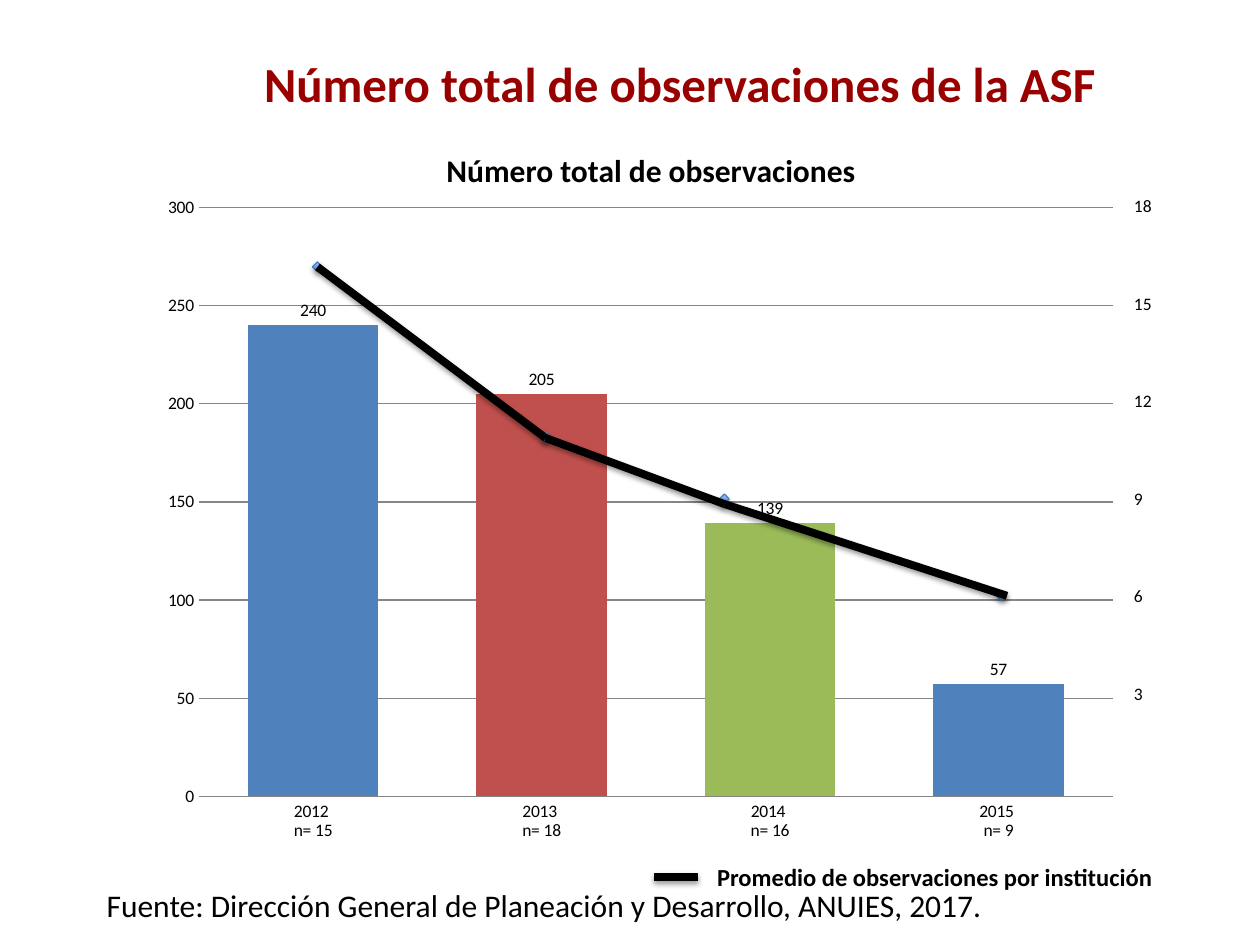
from collections import namedtuple
from itertools import pairwise

from lxml.etree import SubElement
from pptx import Presentation
from pptx.chart.data import CategoryChartData
from pptx.dml.color import RGBColor
from pptx.enum.chart import XL_CHART_TYPE as ChartType
from pptx.enum.chart import XL_LABEL_POSITION as LabelPosition
from pptx.enum.chart import XL_TICK_MARK as TickMark
from pptx.enum.shapes import MSO_CONNECTOR as Connector
from pptx.enum.shapes import MSO_SHAPE as Shape
from pptx.enum.text import MSO_ANCHOR as Anchor
from pptx.enum.text import MSO_AUTO_SIZE as AutoSize
from pptx.enum.text import PP_ALIGN as Align
from pptx.oxml import parse_xml
from pptx.oxml.ns import nsdecls, qn
from pptx.util import Cm, Pt

Box = namedtuple("Box", "left top width height")

FONT = "Calibri"
BLACK = "000000"
BLUE, RED, GREEN = "4F81BD", "C0504D", "9BBB59"
OBSERVATIONS = {"2012 \nn= 15": 240, "2013 \nn= 18": 205,
                "2014 \nn= 16": 139, "2015 \nn= 9": 57}
MARKERS = [(3.38, 1.6), (7.98, 5.04), (11.58, 6.28), (17.17, 8.23)]
TREND = [(3.38, 1.6), (7.98, 5.05), (11.58, 6.38), (17.28, 8.23)]


def color(value):
    """Turn a hex string into a colour."""
    return RGBColor.from_string(value)


def lengths(box):
    """Turn a box in centimetres into slide lengths."""
    return [Cm(value) for value in box]


def add_run(paragraph, text, size, hex_color=BLACK, bold=False):
    """Append one formatted run."""
    run = paragraph.add_run()
    run.text = text
    run.font.name = FONT
    run.font.size = Pt(size)
    run.font.bold = bold
    run.font.color.rgb = color(hex_color)


def add_label(slide, box, text, size, bold=False, align=Align.LEFT):
    """Add a one-line text box that fits its text."""
    frame = slide.shapes.add_textbox(*lengths(box)).text_frame
    frame.word_wrap = False
    frame.auto_size = AutoSize.SHAPE_TO_FIT_TEXT
    frame.paragraphs[0].alignment = align
    add_run(frame.paragraphs[0], text, size, bold=bold)


def add_shadow(shape, distance, opacity):
    """Give a shape or connector a soft shadow below it."""
    properties = shape.element.spPr
    for effects in properties.findall(qn("a:effectLst")):
        properties.remove(effects)
    properties.append(parse_xml(
        f'<a:effectLst {nsdecls("a")}>'
        f'<a:outerShdw blurRad="{Pt(3.1)}" dist="{Pt(distance)}" dir="5400000" rotWithShape="0">'
        f'<a:srgbClr val="{BLACK}"><a:alpha val="{opacity * 1000}"/></a:srgbClr>'
        '</a:outerShdw></a:effectLst>'))


def add_thick_line(slide, start, end):
    """Draw one thick black segment between two points."""
    line = slide.shapes.add_connector(Connector.STRAIGHT, *lengths(start + end))
    line.line.color.rgb = color(BLACK)
    line.line.width = Pt(4.5)
    add_shadow(line, 1.6, 38)


def add_marker(slide, center):
    """Draw a small diamond around a point."""
    side = 0.2
    box = Box(center[0] - side / 2, center[1] - side / 2, side, side)
    marker = slide.shapes.add_shape(Shape.DIAMOND, *lengths(box))
    marker.fill.gradient()
    marker.fill.gradient_angle = 90
    for stop, value in zip(marker.fill.gradient_stops, ("3F80CE", "A4C4FF")):
        stop.color.rgb = color(value)
    marker.line.color.rgb = color("4B7EBC")
    marker.line.width = Pt(0.75)
    add_shadow(marker, 1.8, 35)


def set_plot_layout(chart, fractions):
    """Fix the inner plot area as fractions of the chart."""
    plot_area = chart.element.find(".//" + qn("c:plotArea"))
    for layout in plot_area.findall(qn("c:layout")):
        plot_area.remove(layout)
    layout = parse_xml(f'<c:layout {nsdecls("c")}/>')
    manual = SubElement(layout, qn("c:manualLayout"))
    settings = {"layoutTarget": "inner", "xMode": "edge", "yMode": "edge",
                **dict(zip("xywh", fractions))}
    for name, value in settings.items():
        SubElement(manual, qn(f"c:{name}")).set("val", str(value))
    plot_area.insert(0, layout)


def format_axes(chart):
    """Set scale, gridlines and tick marks."""
    values, categories = chart.value_axis, chart.category_axis
    values.minimum_scale, values.maximum_scale, values.major_unit = 0, 300, 50
    values.has_major_gridlines = True
    values.format.line.fill.background()
    for axis in (values, categories):
        axis.major_tick_mark = axis.minor_tick_mark = TickMark.NONE
    for line in (values.major_gridlines.format.line, categories.format.line):
        line.color.rgb = color("868686")
        line.width = Pt(0.75)


def add_bar_chart(slide, box):
    """Add the column chart of observations per year."""
    data = CategoryChartData()
    data.categories = list(OBSERVATIONS)
    data.add_series("Series 1", list(OBSERVATIONS.values()))
    chart = slide.shapes.add_chart(ChartType.COLUMN_CLUSTERED, *lengths(box), data).chart
    chart.has_legend = chart.has_title = False
    chart.font.name = FONT
    chart.font.size = Pt(10)
    chart.font.color.rgb = color(BLACK)
    format_axes(chart)
    set_plot_layout(chart, (0.05, 0.03, 0.93, 0.88))

    plot = chart.plots[0]
    plot.gap_width, plot.overlap = 75, -25
    plot.vary_by_categories = False
    series = plot.series[0]
    series.format.fill.solid()
    series.format.fill.fore_color.rgb = color(BLUE)
    for index, value in ((1, RED), (2, GREEN)):
        fill = series.points[index].format.fill
        fill.solid()
        fill.fore_color.rgb = color(value)
    labels = series.data_labels
    labels.show_value = True
    labels.position = LabelPosition.OUTSIDE_END


def add_average_scale(slide, box):
    """Write the right-hand scale from 18 down to 3."""
    step = box.height / 6
    for row, value in enumerate(range(18, 0, -3)):
        label_box = Box(box.left, box.top + row * step, box.width, 0.68)
        add_label(slide, label_box, str(value), 10)


def add_average_trend(slide, box):
    """Draw the markers and the line of averages over the chart."""
    def place(point):
        return box.left + point[0], box.top + point[1]

    for point in MARKERS:
        add_marker(slide, place(point))
    for start, end in pairwise(TREND):
        add_thick_line(slide, place(start), place(end))


def add_legend(slide, box):
    """Add the key for the line of averages."""
    middle = box.top + box.height / 2
    add_label(slide, Box(box.left + 0.99, box.top, box.width - 0.99, box.height),
              "Promedio de observaciones por institución", 14, True, Align.CENTER)
    add_thick_line(slide, (box.left, middle), (box.left + 0.89, middle))


def set_title(slide, box):
    """Move and format the title placeholder."""
    title = slide.shapes.title
    title.left, title.top, title.width, title.height = lengths(box)
    frame = title.text_frame
    frame.auto_size = AutoSize.NONE
    frame.vertical_anchor = Anchor.MIDDLE
    frame.paragraphs[0].alignment = Align.CENTER
    add_run(frame.paragraphs[0], "Número total de observaciones de la ASF", 28, "990000", True)


def main():
    """Build and save the slide."""
    presentation = Presentation()
    presentation.slide_width, presentation.slide_height = Cm(25.4), Cm(19.05)
    slide = presentation.slides.add_slide(presentation.slide_layouts[5])
    chart_box = Box(3.02, 3.78, 19.81, 13.49)
    set_title(slide, Box(3.1, 0.84, 21.2, 1.68))
    add_label(slide, Box(8.64, 2.92, 8.97, 1.02), "Número total de observaciones",
              18, True, Align.CENTER)
    add_bar_chart(slide, chart_box)
    add_average_scale(slide, Box(22.61, 3.81, 0.89, 11.8))
    add_average_trend(slide, chart_box)
    add_legend(slide, Box(13.18, 17.25, 10.34, 0.86))
    add_label(slide, Box(1.9, 17.73, 18.24, 1.02),
              "Fuente: Dirección General de Planeación y Desarrollo, ANUIES, 2017.", 18)
    presentation.save("out.pptx")


if __name__ == "__main__":
    main()
